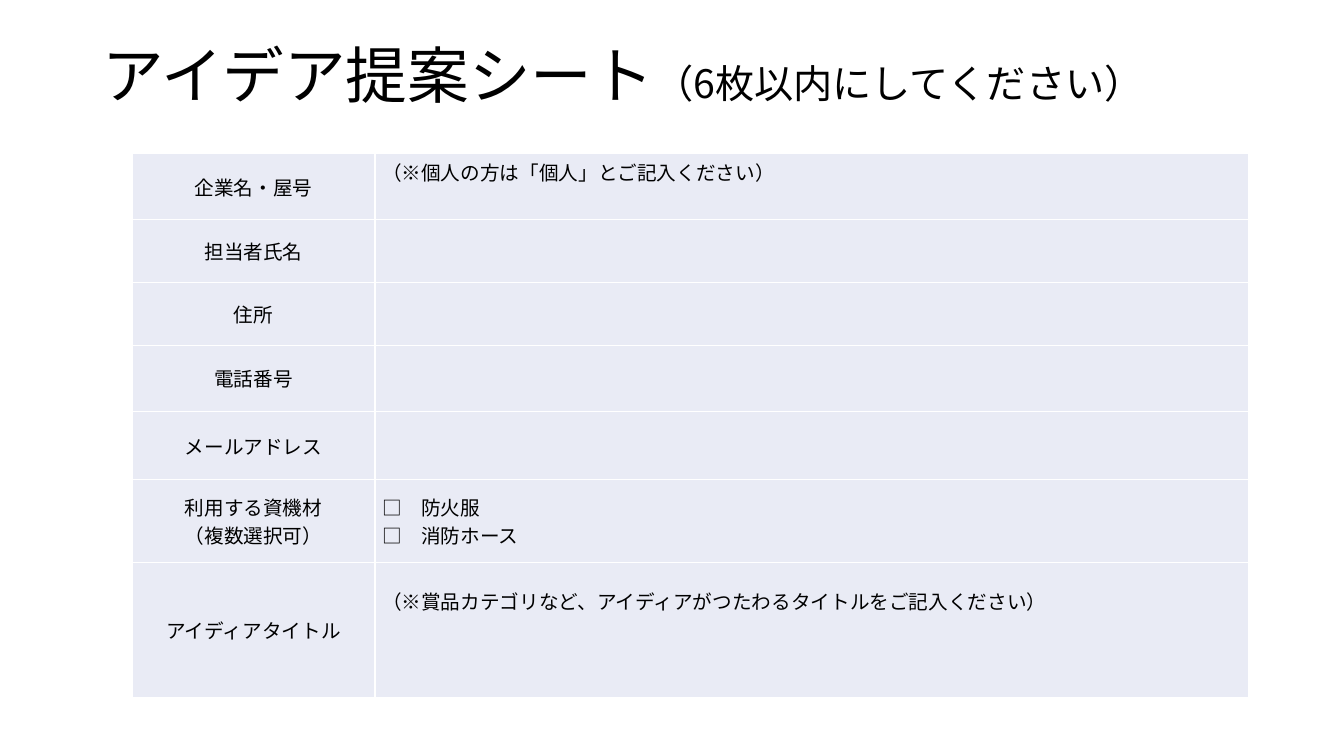
from dataclasses import dataclass

from lxml import etree
from pptx import Presentation
from pptx.dml.color import RGBColor
from pptx.enum.lang import MSO_LANGUAGE_ID
from pptx.enum.text import MSO_ANCHOR, PP_ALIGN
from pptx.oxml.ns import qn
from pptx.slide import Slide
from pptx.table import _Cell
from pptx.text.text import _Paragraph
from pptx.util import Cm, Pt

CENTER, JUSTIFY = PP_ALIGN.CENTER, PP_ALIGN.JUSTIFY
TOP, MIDDLE = MSO_ANCHOR.TOP, MSO_ANCHOR.MIDDLE
JAPANESE = MSO_LANGUAGE_ID.JAPANESE
BLANK_LAYOUT = 6


@dataclass(frozen=True)
class Theme:
    font: str = "Noto Sans CJK JP"
    text: str = "000000"
    cell: str = "E9EBF5"
    border: str = "FFFFFF"
    title_size: int = 44
    note_size: int = 28
    body_size: int = 14
    border_width: int = 1


@dataclass(frozen=True)
class FormRow:
    height: float
    label: tuple[str, ...]
    entry: tuple[str, ...] = ()
    space_below: float = 0  # room left for handwriting under the entry


THEME = Theme()
COLUMN_WIDTHS = (6.12, 22.02)
FORM_ROWS = (
    FormRow(1.68, ("企業名・屋号",), ("（※個人の方は「個人」とご記入ください）",), 0.72),
    FormRow(1.57, ("担当者氏名",)),
    FormRow(1.6, ("住所",)),
    FormRow(1.65, ("電話番号",)),
    FormRow(1.73, ("メールアドレス",)),
    FormRow(2.08, ("利用する資機材", "（複数選択可）"), ("□　防火服", "□　消防ホース")),
    FormRow(3.4, ("アイディアタイトル",),
            ("（※賞品カテゴリなど、アイディアがつたわるタイトルをご記入ください）",), 1.44),
)


def add_text(paragraph: _Paragraph, text: str, *, size: int,
             color: str = THEME.text, font: str = THEME.font) -> None:
    run = paragraph.add_run()
    run.text = text
    run.font.size = Pt(size)
    run.font.color.rgb = RGBColor.from_string(color)
    run.font.name = font
    run.font.language_id = JAPANESE
    # East Asian typeface follows the Latin one
    latin = run._r.get_or_add_rPr().find(qn("a:latin"))
    east_asian = etree.Element(qn("a:ea"), typeface=font)
    latin.addnext(east_asian)


def add_borders(cell: _Cell) -> None:
    properties = cell._tc.get_or_add_tcPr()
    for side in ("lnL", "lnR", "lnT", "lnB"):
        line = etree.SubElement(properties, qn(f"a:{side}"), w=str(Pt(THEME.border_width)))
        fill = etree.SubElement(line, qn("a:solidFill"))
        etree.SubElement(fill, qn("a:srgbClr"), val=THEME.border)


def fill_cell(cell: _Cell, lines: tuple[str, ...], alignment: PP_ALIGN,
              space_below: float = 0) -> None:
    add_borders(cell)
    cell.fill.solid()
    cell.fill.fore_color.rgb = RGBColor.from_string(THEME.cell)
    cell.vertical_anchor = MIDDLE
    cell.margin_left = cell.margin_right = Cm(0.18)
    cell.margin_top = Cm(0)
    cell.margin_bottom = Cm(space_below)
    text_frame = cell.text_frame
    for index, line in enumerate(lines):
        paragraph = text_frame.add_paragraph() if index else text_frame.paragraphs[0]
        paragraph.alignment = alignment
        add_text(paragraph, line, size=THEME.body_size)


def add_title(slide: Slide) -> None:
    shape = slide.shapes.add_textbox(Cm(2.34), Cm(1.02), Cm(29.21), Cm(3.68))
    text_frame = shape.text_frame
    text_frame.word_wrap = True
    text_frame.vertical_anchor = TOP
    paragraph = text_frame.paragraphs[0]
    paragraph.line_spacing = 0.9
    add_text(paragraph, "アイデア提案シート", size=THEME.title_size)
    add_text(paragraph, "（6枚以内にしてください）", size=THEME.note_size)


def add_form(slide: Slide) -> None:
    table = slide.shapes.add_table(
        len(FORM_ROWS), len(COLUMN_WIDTHS), Cm(3.33), Cm(3.86),
        Cm(sum(COLUMN_WIDTHS)), Cm(sum(row.height for row in FORM_ROWS))).table
    table.first_row = table.horz_banding = False
    for column, width in zip(table.columns, COLUMN_WIDTHS):
        column.width = Cm(width)
    for table_row, form_row in zip(table.rows, FORM_ROWS):
        table_row.height = Cm(form_row.height)
        label_cell, entry_cell = table_row.cells
        fill_cell(label_cell, form_row.label, CENTER)
        fill_cell(entry_cell, form_row.entry, JUSTIFY, form_row.space_below)


def main() -> None:
    presentation = Presentation()
    presentation.slide_width = Cm(33.87)
    presentation.slide_height = Cm(19.05)
    slide = presentation.slides.add_slide(presentation.slide_layouts[BLANK_LAYOUT])

    # Entry form, then the heading above it
    add_form(slide)
    add_title(slide)

    presentation.save("out.pptx")


if __name__ == "__main__":
    main()
